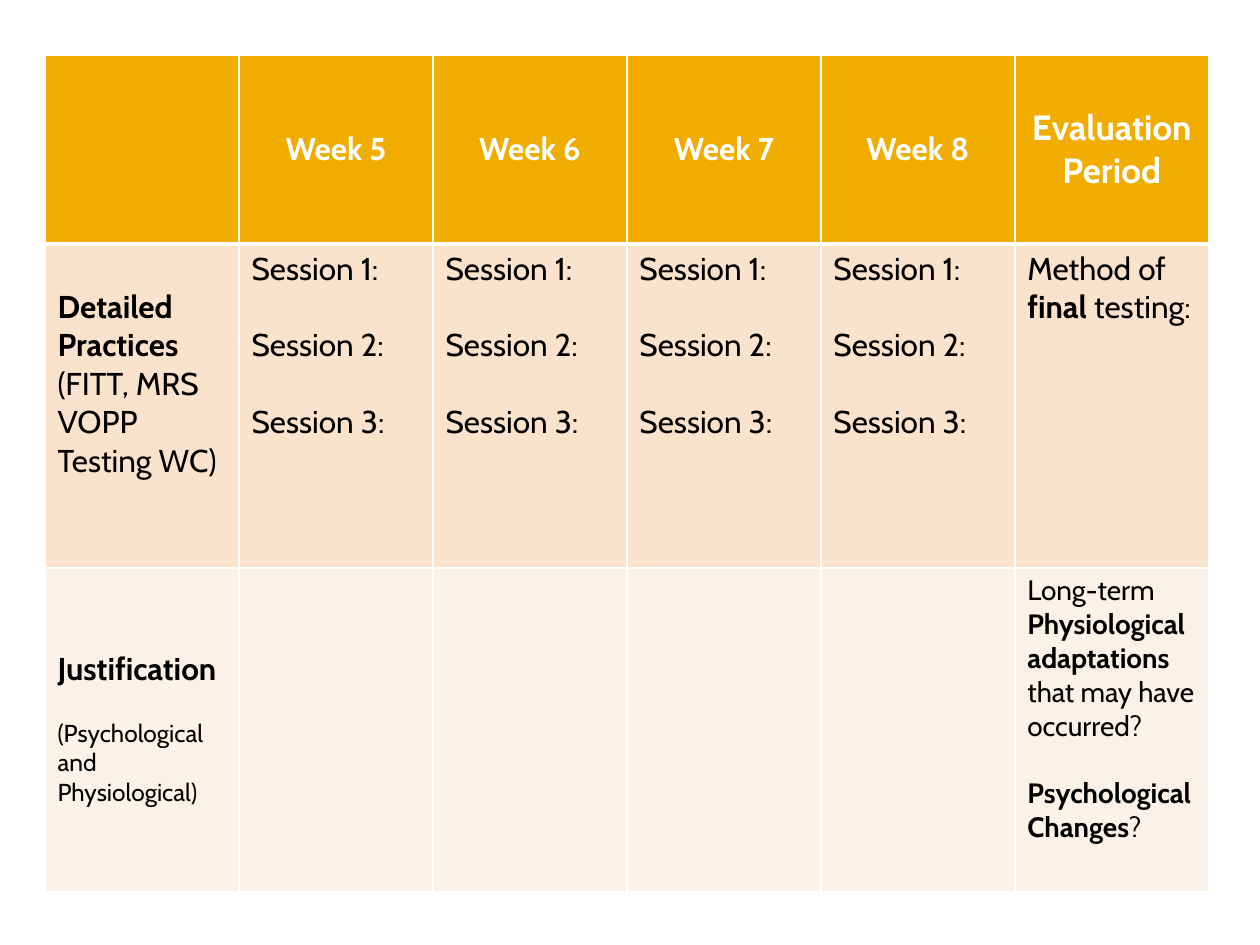
from dataclasses import dataclass
from typing import Any

from lxml.etree import SubElement
from pptx import Presentation
from pptx.dml.color import RGBColor
from pptx.enum.text import MSO_ANCHOR, PP_ALIGN
from pptx.oxml.ns import qn
from pptx.util import Emu, Inches, Pt

PX_PER_INCH = 126
COLORS = {
    "header": "F0AD00",
    "practices": "F9E3CC",
    "justification": "FCF1E7",
    "white": "FFFFFF",
    "black": "000000",
}
FONT_NAME = "Cabin"
LEFT, TOP = 45, 55
COLUMN_WIDTH, COLUMN_COUNT = 194, 6
LINE_GAP = 38


@dataclass(frozen=True)
class TextRun:
    """A stretch of text in one weight."""

    text: str
    bold: bool = False


@dataclass(frozen=True)
class TextLine:
    """A paragraph with its size in points and the gap above it in px."""

    runs: tuple[TextRun, ...]
    size: int = 18
    gap: int = 0


@dataclass(frozen=True)
class CellContent:
    """The paragraphs of a cell and its top margin in px."""

    lines: tuple[TextLine, ...] = ()
    margin_top: int = 6


@dataclass(frozen=True)
class RowStyle:
    """The look shared by all cells of a row."""

    height: int
    fill: str
    font: str
    anchor: MSO_ANCHOR
    alignment: PP_ALIGN
    top_border: int = 1
    bottom_border: int = 1


def px(length: int) -> Emu:
    """Turn whole px into EMU."""
    return Emu(round(length * Inches(1) / PX_PER_INCH))


def set_format(target: Any, values: dict[str, Any]) -> None:
    """Set every format value on the target."""
    for name, value in values.items():
        setattr(target, name, value)


def add_borders(cell: Any, style: RowStyle) -> None:
    """Draw white lines on the four sides of a cell."""
    properties = cell._tc.get_or_add_tcPr()
    widths = {"lnL": 1, "lnR": 1, "lnT": style.top_border, "lnB": style.bottom_border}
    for position, (side, width) in enumerate(widths.items()):
        line = SubElement(properties, qn(f"a:{side}"), w=str(Pt(width)))
        fill = SubElement(line, qn("a:solidFill"))
        SubElement(fill, qn("a:srgbClr"), val=COLORS["white"])
        properties.insert(position, line)


def write_cell(cell: Any, content: CellContent, style: RowStyle) -> None:
    """Fill, frame and write one cell."""
    cell.fill.solid()
    cell.fill.fore_color.rgb = RGBColor.from_string(COLORS[style.fill])
    add_borders(cell, style)
    set_format(cell, {"vertical_anchor": style.anchor, "margin_top": px(content.margin_top)})
    for index, line in enumerate(content.lines):
        frame = cell.text_frame
        paragraph = frame.add_paragraph() if index else frame.paragraphs[0]
        set_format(paragraph, {"alignment": style.alignment, "space_before": px(line.gap)})
        for text_run in line.runs:
            run = paragraph.add_run()
            run.text = text_run.text
            set_format(run.font, {"name": FONT_NAME, "size": Pt(line.size), "bold": text_run.bold})
            run.font.color.rgb = RGBColor.from_string(COLORS[style.font])


def heading(text: str, size: int = 18) -> CellContent:
    """Make the content of a header cell."""
    return CellContent((TextLine((TextRun(text, True),), size),))


STYLES = (
    RowStyle(189, "header", "white", MSO_ANCHOR.MIDDLE, PP_ALIGN.CENTER, bottom_border=3),
    RowStyle(324, "practices", "black", MSO_ANCHOR.TOP, PP_ALIGN.LEFT, top_border=3),
    RowStyle(324, "justification", "black", MSO_ANCHOR.TOP, PP_ALIGN.LEFT),
)
SESSIONS = CellContent(tuple(
    TextLine((TextRun(f"Session {number}:"),), gap=LINE_GAP if number > 1 else 0)
    for number in range(1, 4)
))
PRACTICES = CellContent((
    TextLine((TextRun("Detailed Practices ", True), TextRun("(FITT, MRS VOPP Testing WC)"))),
), margin_top=6 + LINE_GAP)
FINAL_TESTING = CellContent((
    TextLine((TextRun("Method of "), TextRun("final", True), TextRun(" testing:"))),
))
JUSTIFICATION = CellContent((
    TextLine((TextRun("Justification", True),)),
    TextLine((TextRun("(Psychological and Physiological)"),), size=14, gap=30),
), margin_top=6 + 2 * LINE_GAP)
ADAPTATIONS = CellContent((
    TextLine((
        TextRun("Long-term "),
        TextRun("Physiological adaptations ", True),
        TextRun("that may have occurred?"),
    ), size=16),
    TextLine((TextRun("Psychological Changes", True), TextRun("?")), size=16, gap=34),
))
WEEKS = range(5, 9)
ROWS = (
    (CellContent(), *(heading(f"Week {week}") for week in WEEKS), heading("Evaluation Period", 20)),
    (PRACTICES, *(SESSIONS for _ in WEEKS), FINAL_TESTING),
    (JUSTIFICATION, *(CellContent() for _ in WEEKS), ADAPTATIONS),
)


def add_training_table(slide: Any) -> None:
    """Add the training plan table to the slide."""
    width = COLUMN_WIDTH * COLUMN_COUNT
    height = sum(style.height for style in STYLES)
    shape = slide.shapes.add_table(
        len(ROWS), COLUMN_COUNT, px(LEFT), px(TOP), px(width), px(height)
    )
    table = shape.table
    for column in table.columns:
        column.width = px(COLUMN_WIDTH)
    for row, style, contents in zip(table.rows, STYLES, ROWS):
        row.height = px(style.height)
        for cell, content in zip(row.cells, contents):
            write_cell(cell, content, style)


def main() -> None:
    """Build and save the presentation."""
    presentation = Presentation()
    set_format(presentation, {"slide_width": px(1260), "slide_height": px(945)})
    slide = presentation.slides.add_slide(presentation.slide_layouts[6])
    add_training_table(slide)
    presentation.save("out.pptx")


if __name__ == "__main__":
    main()
